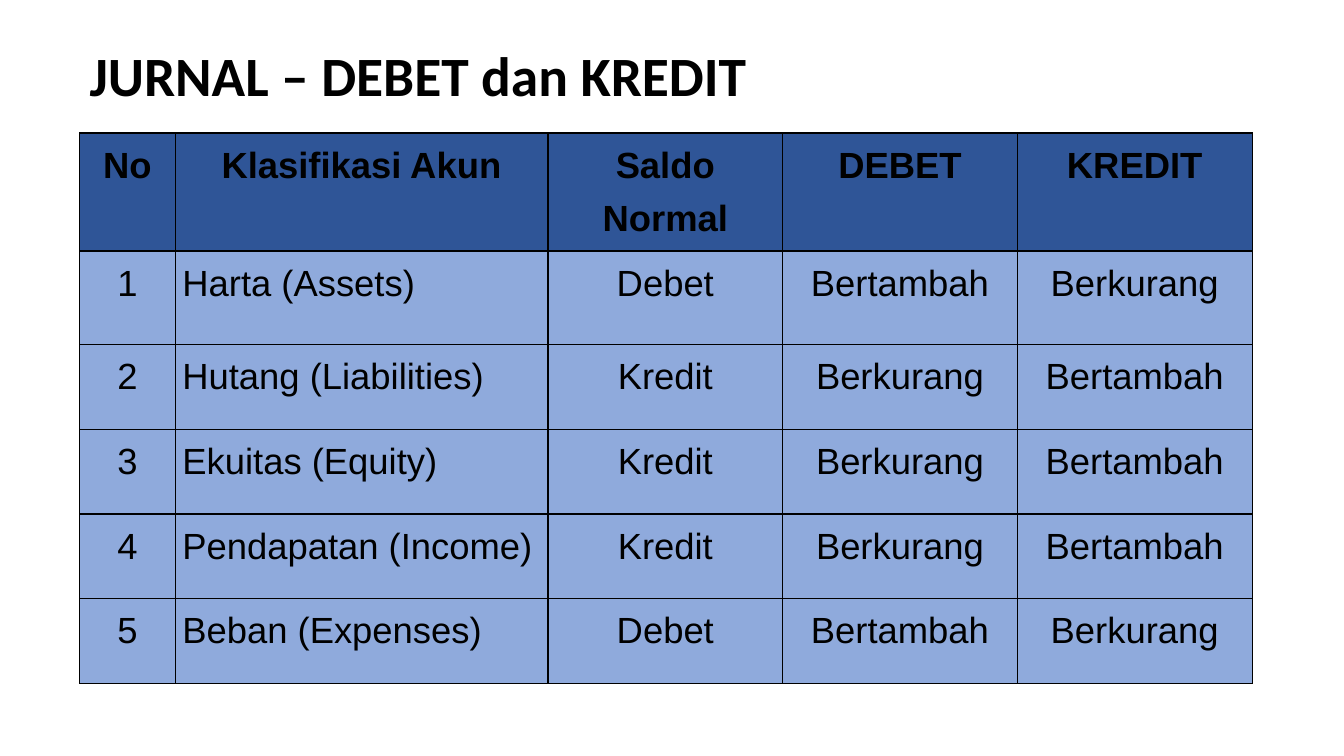
import pptx
import pptx.dml.color
import pptx.enum.text
import pptx.oxml
import pptx.oxml.ns
import pptx.util

Inches = pptx.util.Inches
ALIGN = pptx.enum.text.PP_ALIGN
ANCHOR = pptx.enum.text.MSO_ANCHOR

BLACK, HEADER_BLUE, BODY_BLUE = "000000", "2F5597", "8FAADC"
TITLE = "JURNAL – DEBET dan KREDIT"
HEADINGS = ["No", "Klasifikasi Akun", "Saldo Normal", "DEBET", "KREDIT"]
ACCOUNTS = [
    ("Harta (Assets)", "Debet"),
    ("Hutang (Liabilities)", "Kredit"),
    ("Ekuitas (Equity)", "Kredit"),
    ("Pendapatan (Income)", "Kredit"),
    ("Beban (Expenses)", "Debet"),
]
EFFECTS = {"Debet": ("Bertambah", "Berkurang"), "Kredit": ("Berkurang", "Bertambah")}
COLUMN_WIDTHS = [0.95, 3.7, 2.33, 2.33, 2.33]
ROW_HEIGHTS = [1.17, 0.93, 0.84, 0.84, 0.84, 0.84]


def rgb(value):
    """Turn a hex string into a colour."""
    return pptx.dml.color.RGBColor.from_string(value)


def set_attributes(target, values):
    """Set each named attribute of the target."""
    for name, value in values.items():
        setattr(target, name, value)


def write_text(paragraph, text, alignment, spacing, font, size, bold):
    """Write one formatted run in a paragraph."""
    set_attributes(paragraph, {"alignment": alignment, "line_spacing": spacing})
    run = paragraph.add_run()
    run.text = text
    set_attributes(run.font, {"name": font, "size": pptx.util.Pt(size), "bold": bold})
    run.font.color.rgb = rgb(BLACK)


def add_borders(cell, color, width):
    """Draw a solid line on all four sides of a cell."""
    properties = cell._tc.get_or_add_tcPr()
    for side in ("lnL", "lnR", "lnT", "lnB"):
        properties.append(pptx.oxml.parse_xml(
            f'<a:{side} {pptx.oxml.ns.nsdecls("a")} w="{pptx.util.Pt(width)}">'
            f'<a:solidFill><a:srgbClr val="{color}"/></a:solidFill></a:{side}>'))


def add_title(slide, left, top, width, height):
    """Place the slide title in its box."""
    box = slide.shapes.add_textbox(Inches(left), Inches(top), Inches(width), Inches(height))
    set_attributes(box.text_frame, {"word_wrap": True, "vertical_anchor": ANCHOR.MIDDLE})
    write_text(box.text_frame.paragraphs[0], TITLE, ALIGN.LEFT, 0.9, "Calibri", 39.6, True)


def fill_cell(cell, text, is_header, alignment):
    """Format one table cell and write its text."""
    set_attributes(cell, {"margin_left": Inches(0.07), "margin_right": Inches(0.07),
                          "margin_top": 0, "margin_bottom": 0})
    add_borders(cell, BLACK, 1)
    cell.fill.solid()
    cell.fill.fore_color.rgb = rgb(HEADER_BLUE if is_header else BODY_BLUE)
    write_text(cell.text_frame.paragraphs[0], text, alignment, 1.3, "Arial", 26, is_header)


def add_journal_table(slide, left, top, width, height):
    """Place the table of account classes in its box."""
    rows = [HEADINGS] + [[str(number), account, balance, *EFFECTS[balance]]
                         for number, (account, balance) in enumerate(ACCOUNTS, 1)]
    table = slide.shapes.add_table(len(rows), len(HEADINGS), Inches(left), Inches(top),
                                   Inches(width), Inches(height)).table
    for column, share in zip(table.columns, COLUMN_WIDTHS):
        column.width = Inches(width * share / sum(COLUMN_WIDTHS))
    for row, share in zip(table.rows, ROW_HEIGHTS):
        row.height = Inches(height * share / sum(ROW_HEIGHTS))
    for row_index, row in enumerate(rows):
        for column_index, text in enumerate(row):
            is_account = row_index > 0 and column_index == 1
            fill_cell(table.cell(row_index, column_index), text, row_index == 0,
                      ALIGN.JUSTIFY if is_account else ALIGN.CENTER)


def main():
    """Build the slide and save the presentation."""
    presentation = pptx.Presentation()
    set_attributes(presentation, {"slide_width": Inches(13.33), "slide_height": Inches(7.5)})
    slide = presentation.slides.add_slide(presentation.slide_layouts[6])
    add_title(slide, 0.79, 0.4, 11.63, 0.76)
    add_journal_table(slide, 0.79, 1.32, 11.63, 5.46)
    presentation.save("out.pptx")


if __name__ == "__main__":
    main()
